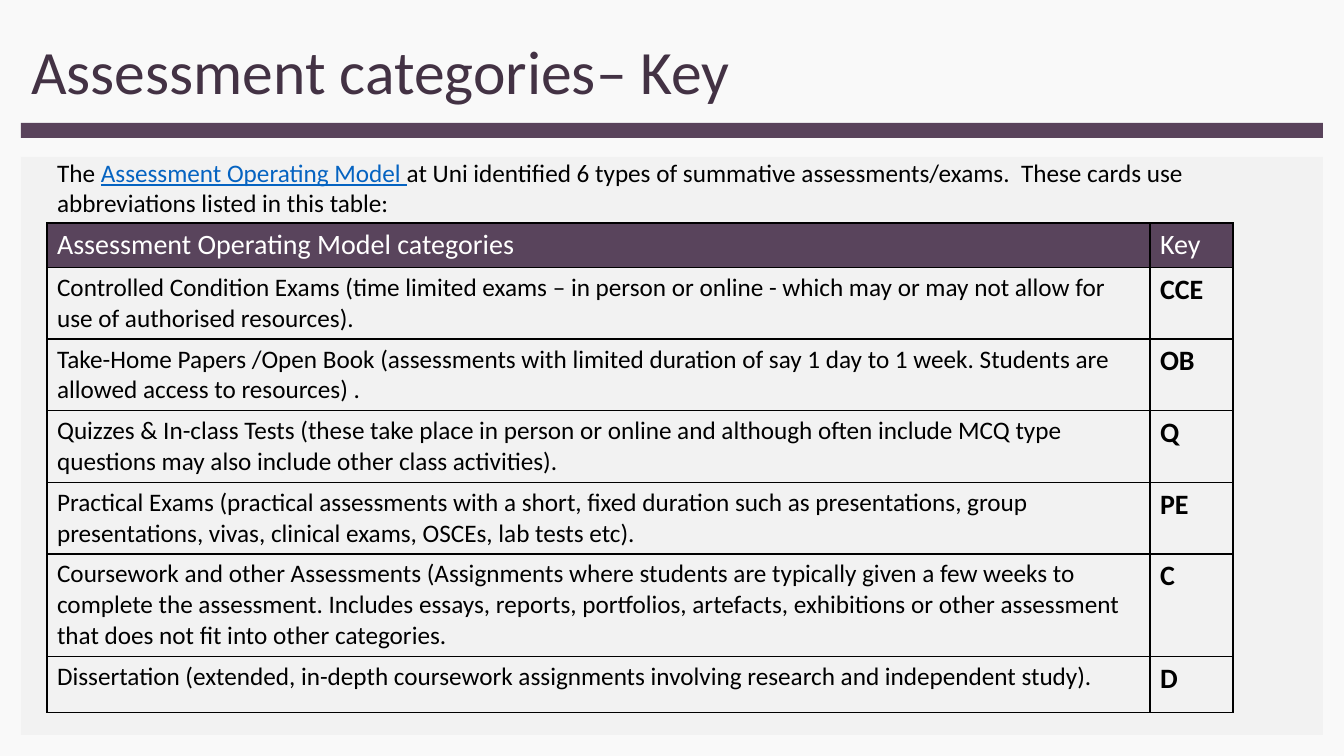
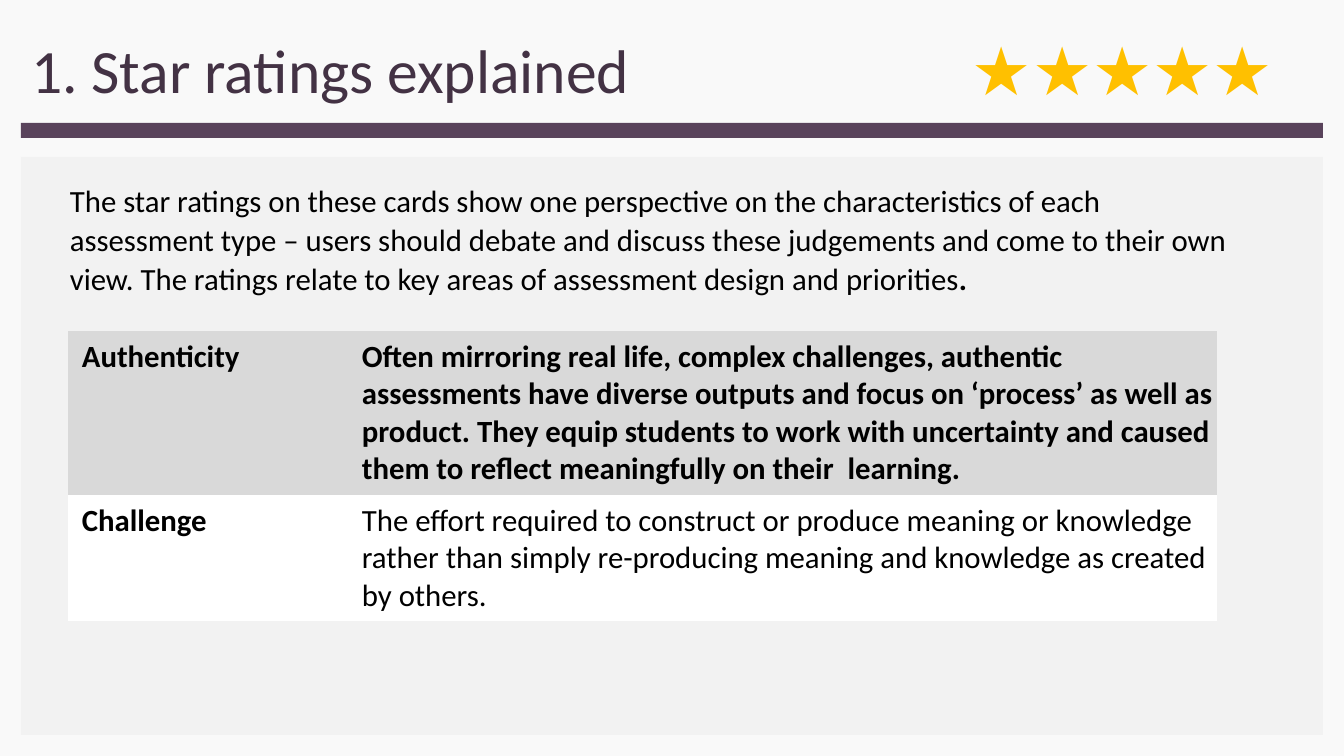
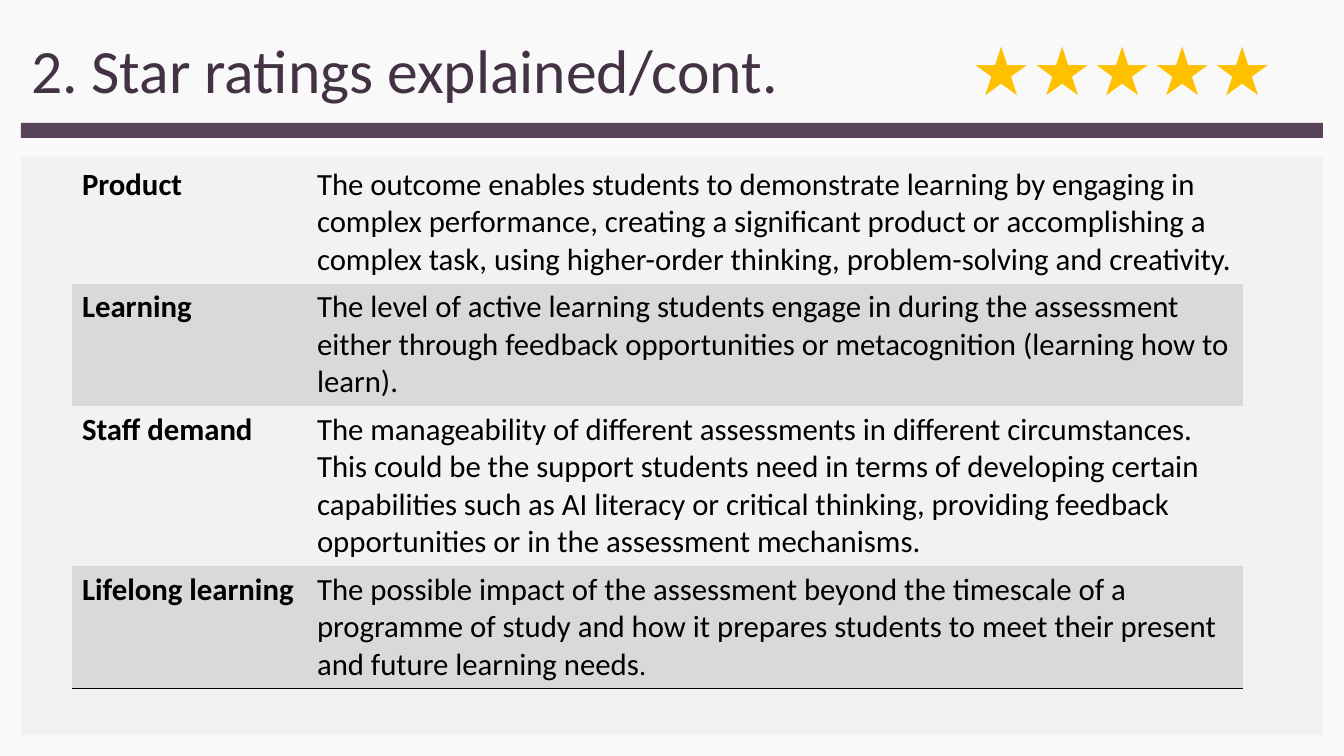
import pptx
import pptx.dml.color
import pptx.enum.shapes
import pptx.enum.text
import pptx.oxml
import pptx.oxml.ns
import pptx.util

RGBColor = pptx.dml.color.RGBColor
EMU_PER_PX = 914400 / 100.8
FONT = "Calibri"
BACKGROUND = RGBColor(0xF9, 0xF9, 0xF9)
PANEL = RGBColor(0xF2, 0xF2, 0xF2)
PURPLE = RGBColor(0x59, 0x43, 0x5B)
HEADER = RGBColor(0x59, 0x44, 0x5C)
TITLE = RGBColor(0x43, 0x32, 0x44)
STRIPE = RGBColor(0xD9, 0xD9, 0xD9)
GOLD = RGBColor(0xFF, 0xC0, 0x00)
LINK = RGBColor(0x05, 0x63, 0xC1)
BLACK = RGBColor(0, 0, 0)
WHITE = RGBColor(0xFF, 0xFF, 0xFF)

PLAIN_TABLE_STYLE = "{2D5ABB26-0587-4C30-8999-92F81FD0307C}"
BORDER_SIDES = ("L", "R", "T", "B")
TITLE_AND_CONTENT, TITLE_ONLY = 1, 5

CATEGORIES = [
    ("Assessment Operating Model categories", "Key"),
    ("Controlled Condition Exams (time limited exams – in person or online - which may or "
     "may not allow for use of authorised resources).", "CCE"),
    ("Take-Home Papers /Open Book (assessments with limited duration of say 1 day to 1 week. "
     "Students are allowed access to resources) .", "OB"),
    ("Quizzes & In-class Tests (these take place in person or online and although often "
     "include MCQ type questions may also include other class activities).", "Q"),
    ("Practical Exams (practical assessments with a short, fixed duration such as "
     "presentations, group presentations, vivas, clinical exams, OSCEs, lab tests etc).", "PE"),
    ("Coursework and other Assessments (Assignments where students are typically given a few "
     "weeks to complete the assessment. Includes essays, reports, portfolios, artefacts, "
     "exhibitions or other assessment that does not fit into other categories.", "C"),
    ("Dissertation (extended, in-depth coursework assignments involving research and "
     "independent study).", "D"),
]
FIRST_RATINGS = [
    ("Authenticity",
     "Often mirroring real life, complex challenges, authentic assessments have diverse "
     "outputs and focus on ‘process’ as well as product. They equip students to work with "
     "uncertainty and caused them to reflect meaningfully on their  learning."),
    ("Challenge",
     "The effort required to construct or produce meaning or knowledge rather than simply "
     "re-producing meaning and knowledge as created by others."),
]
MORE_RATINGS = [
    ("Product",
     "The outcome enables students to demonstrate learning by engaging in complex "
     "performance, creating a significant product or accomplishing a complex task, using "
     "higher-order thinking, problem-solving and creativity."),
    ("Learning",
     "The level of active learning students engage in during the assessment either through "
     "feedback opportunities or metacognition (learning how to learn)."),
    ("Staff demand",
     "The manageability of different assessments in different circumstances. This could be "
     "the support students need in terms of developing certain capabilities such as AI "
     "literacy or critical thinking, providing feedback opportunities or in the assessment "
     "mechanisms."),
    ("Lifelong learning",
     "The possible impact of the assessment beyond the timescale of a programme of study and "
     "how it prepares students to meet their present and future learning needs"),
]


def px(length):
    """Turn a length in px into EMU."""
    return pptx.util.Emu(round(length * EMU_PER_PX))


def place(shape, box):
    """Move a shape to a px box."""
    shape.left, shape.top, shape.width, shape.height = map(px, box)


def set_font(font, size, color=BLACK, bold=False):
    """Give a font its face, size, colour and weight."""
    font.name = FONT
    font.size = pptx.util.Pt(size)
    font.bold = bold
    font.color.rgb = color


def write(text_frame, runs, size, color=BLACK):
    """Fill a frame with one left-aligned paragraph and return it."""
    text_frame.word_wrap = True
    text_frame.auto_size = pptx.enum.text.MSO_AUTO_SIZE.NONE
    paragraph = text_frame.paragraphs[0]
    paragraph.alignment = pptx.enum.text.PP_ALIGN.LEFT
    paragraph.space_before = pptx.util.Pt(0)
    set_font(paragraph.font, size, color)
    for text in runs:
        paragraph.add_run().text = text
    return paragraph


def add_backdrop(slide):
    """Put the title band and the content panel behind everything else."""
    for box, color in (((21, 123, 1302, 15), PURPLE), ((21, 157, 1302, 578), PANEL)):
        shape = slide.shapes.add_shape(
            pptx.enum.shapes.MSO_SHAPE.RECTANGLE, *map(px, box))
        shape.shadow.inherit = False
        shape.fill.solid()
        shape.fill.fore_color.rgb = color
        shape.line.fill.background()
        slide.shapes.element.insert(2, shape.element)


def add_title(slide, box, text):
    """Place and format the slide title."""
    title = slide.shapes.title
    place(title, box)
    title.text_frame.vertical_anchor = pptx.enum.text.MSO_ANCHOR.MIDDLE
    write(title.text_frame, [text], 44, TITLE).line_spacing = 0.9


def add_introduction(slide, box):
    """Place the opening sentence in the body placeholder."""
    body = slide.placeholders[1]
    place(body, box)
    paragraph = write(body.text_frame, [
        "The ", "Assessment Operating Model ",
        "at Uni identified 6 types of summative assessments/exams.  These cards use "
        "abbreviations listed in this table:"], 18)
    properties = paragraph._p.get_or_add_pPr()
    properties.set("marL", "0")
    properties.set("indent", "0")
    properties.insert_element_before(
        pptx.oxml.parse_xml(f'<a:buNone {pptx.oxml.ns.nsdecls("a")}/>'), "a:defRPr")
    link = paragraph.runs[1].font
    link.underline = True
    link.color.rgb = LINK


def add_text(slide, box, runs, size, color=BLACK):
    """Add a text box of one paragraph and return the paragraph."""
    text_box = slide.shapes.add_textbox(*map(px, box))
    return write(text_box.text_frame, runs, size, color)


def add_borders(cell, sides):
    """Draw thin black lines on the given sides of a cell."""
    properties = cell._tc.get_or_add_tcPr()
    for index, side in enumerate(sides):
        properties.insert(index, pptx.oxml.parse_xml(
            f'<a:ln{side} {pptx.oxml.ns.nsdecls("a")} w="12700"><a:solidFill>'
            f'<a:srgbClr val="{BLACK}"/></a:solidFill></a:ln{side}>'))


def add_table(slide, origin, widths, heights, rows, style_cell):
    """Add an unstyled table and let style_cell format each cell."""
    box = (*origin, sum(widths), sum(heights))
    table = slide.shapes.add_table(len(rows), len(widths), *map(px, box)).table
    table.first_row = table.horz_banding = False
    table._tbl.tblPr[0].text = PLAIN_TABLE_STYLE
    for column, width in zip(table.columns, widths):
        column.width = px(width)
    for row_index, (row, height) in enumerate(zip(rows, heights)):
        table.rows[row_index].height = px(height)
        for column_index, text in enumerate(row):
            cell = table.cell(row_index, column_index)
            cell.text = text
            style_cell(cell, row_index, column_index)
    return table


def fill_cell(cell, color):
    """Give a cell a solid fill, or none."""
    if color is None:
        cell.fill.background()
    else:
        cell.fill.solid()
        cell.fill.fore_color.rgb = color


def style_category(cell, row, column):
    """Format a cell of the key table."""
    is_header = row == 0
    is_key = column == 1
    fill_cell(cell, HEADER if is_header else None)
    set_font(cell.text_frame.paragraphs[0].font, 20 if is_header or is_key else 18,
             WHITE if is_header else BLACK, is_key and not is_header)
    add_borders(cell, BORDER_SIDES)


def style_first_rating(cell, row, column):
    """Format a cell of the first ratings table."""
    cell.margin_left, cell.margin_right = px(14), px(4)
    cell.margin_top = cell.margin_bottom = px(7)
    fill_cell(cell, WHITE if row else STRIPE)
    set_font(cell.text_frame.paragraphs[0].font, 22, bold=row == 0 or column == 0)


def style_more_rating(cell, row, column):
    """Format a cell of the second ratings table."""
    fill_cell(cell, STRIPE if row % 2 else None)
    set_font(cell.text_frame.paragraphs[0].font, 22, bold=column == 0)
    if row == len(MORE_RATINGS) - 1:
        add_borders(cell, "B")


def build_key_slide(slide):
    """Build the slide with the assessment categories."""
    add_backdrop(slide)
    add_title(slide, (21, 13, 1302, 123), "Assessment categories– Key")
    add_introduction(slide, (47, 152, 1276, 528))
    add_table(slide, (47, 223), (1103, 83), (44, 71, 71, 71, 71, 102, 56),
              CATEGORIES, style_category)


def build_rating_slide(slide, title, origin, widths, heights, rows, style_cell):
    """Build a slide with five stars and a ratings table, and return the table."""
    add_backdrop(slide)
    add_title(slide, (21, 10, 978, 127), title)
    add_text(slide, (962, 23, 371, 92), ["★★★★★"], 48, GOLD)
    return add_table(slide, origin, widths, heights, rows, style_cell)


def build_first_rating_slide(slide):
    """Build the slide that introduces the ratings."""
    build_rating_slide(slide, "1. Star ratings explained", (68, 331), (280, 869),
                       (164, 126), FIRST_RATINGS, style_first_rating)
    explanation = add_text(slide, (60, 174, 1191, 106), [
        "The star ratings on these cards show one perspective on the characteristics of each "
        "assessment type – users should debate and discuss these judgements and come to their "
        "own view. The ratings relate to key areas of assessment design and priorities",
        "."], 22)
    explanation.line_spacing = pptx.util.Pt(28)
    explanation.runs[1].font.bold = True


def build_more_rating_slide(slide):
    """Build the slide that continues the ratings."""
    table = build_rating_slide(slide, "2. Star ratings explained/cont.", (72, 161),
                               (235, 936), (122, 122, 160, 122), MORE_RATINGS,
                               style_more_rating)
    full_stop = table.cell(3, 1).text_frame.paragraphs[0].add_run()
    full_stop.text = "."
    full_stop.font.size = pptx.util.Pt(20)


def main():
    """Build and save the presentation."""
    presentation = pptx.Presentation()
    presentation.slide_width, presentation.slide_height = px(1344), px(756)
    background = presentation.slide_master.background.fill
    background.solid()
    background.fore_color.rgb = BACKGROUND
    for layout, build in ((TITLE_AND_CONTENT, build_key_slide),
                          (TITLE_ONLY, build_first_rating_slide),
                          (TITLE_ONLY, build_more_rating_slide)):
        build(presentation.slides.add_slide(presentation.slide_layouts[layout]))
    presentation.save("out.pptx")


if __name__ == "__main__":
    main()
